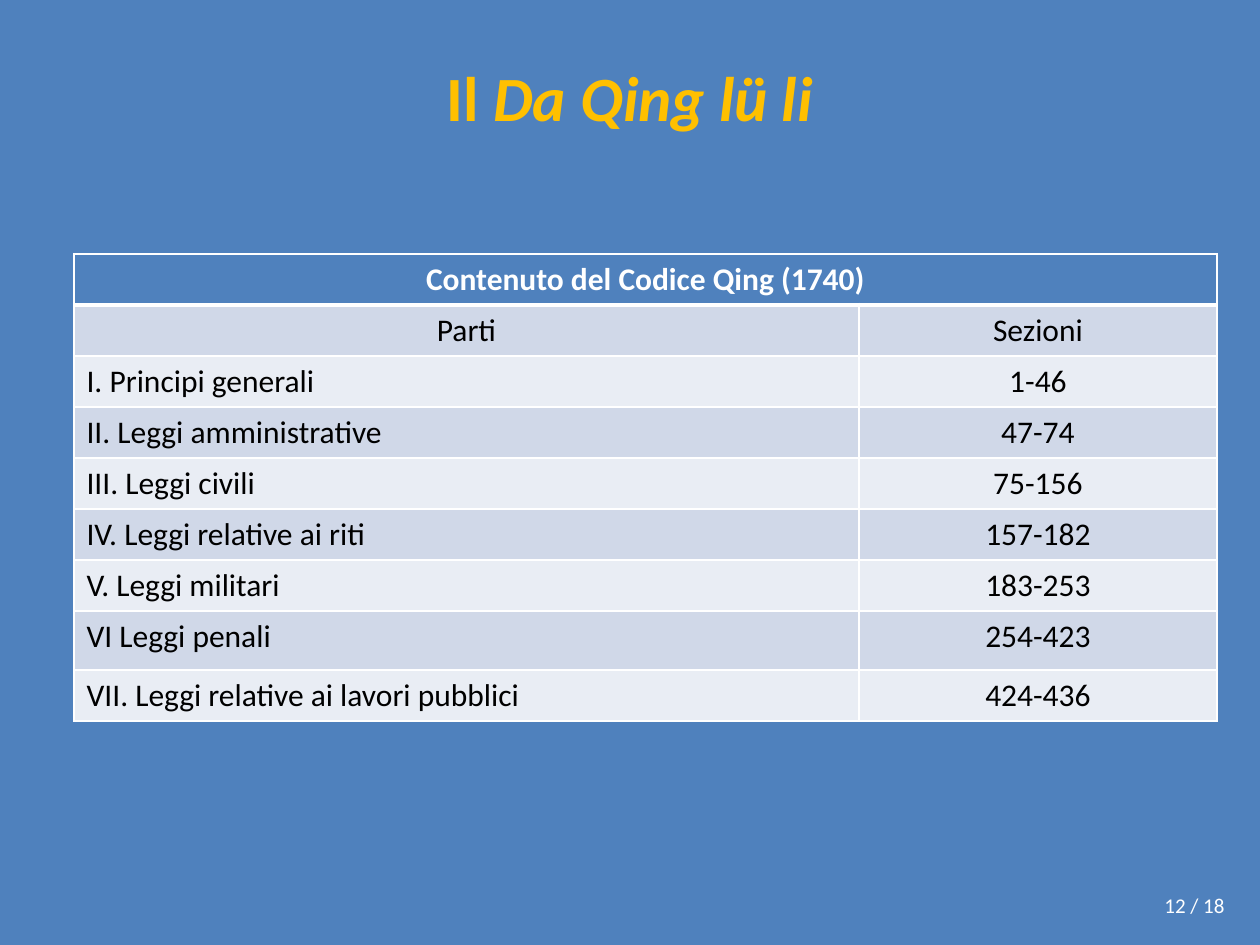
from lxml import etree
from pptx import Presentation, util as u
from pptx.dml.color import RGBColor
from pptx.enum import text
from pptx.oxml import ns

# Content
TITLE = [("Il ", False), ("Da Qing lü li", True)]
HEADER = "Contenuto del Codice Qing (1740)"
ROWS = [
    ("Parti", "Sezioni"),
    ("I. Principi generali", "1-46"),
    ("II. Leggi amministrative", "47-74"),
    ("III. Leggi civili", "75-156"),
    ("IV. Leggi relative ai riti", "157-182"),
    ("V. Leggi militari", "183-253"),
    ("VI Leggi penali", "254-423"),
    ("VII. Leggi relative ai lavori pubblici", "424-436"),
]
PAGE_NUMBER = "12 / 18"

COLOURS = {"blue": "4F81BD", "gold": "FFC000", "white": "FFFFFF",
           "black": "000000", "dark band": "D0D8E8", "light band": "E9EDF4"}
FONT = "Calibri"
COLUMN_WIDTHS = (785, 358)
ROW_HEIGHT, TALL_ROW_HEIGHT, TALL_ROW = 51, 59, 7
LEFT, CENTER, RIGHT = (text.PP_ALIGN.LEFT, text.PP_ALIGN.CENTER,
                       text.PP_ALIGN.RIGHT)


def px(value):
    return u.Emu(round(value * 914400 / 126))


def colour(name):
    return RGBColor.from_string(COLOURS[name])


def style(para, size, colour_name, align, bold=False):
    para.alignment = align
    para.font.name, para.font.size, para.font.bold = FONT, u.Pt(size), bold
    para.font.color.rgb = colour(colour_name)


def add_text(page, place, spans, size, colour_name, align, bold=False):
    frame = page.shapes.add_textbox(*map(px, place)).text_frame
    frame.word_wrap = True
    frame.vertical_anchor = text.MSO_ANCHOR.MIDDLE
    para = frame.paragraphs[0]
    for words, italic in spans:
        span = para.add_run()
        span.text = words
        if italic:
            span.font.italic = True
    style(para, size, colour_name, align, bold)


def set_borders(cell, top=1, bottom=1):
    props = cell._tc.get_or_add_tcPr()
    widths = {"lnL": 1, "lnR": 1, "lnT": top, "lnB": bottom}
    for index, (side, width) in enumerate(widths.items()):
        line = etree.Element(ns.qn("a:" + side), w=str(u.Pt(width)))
        fill = etree.SubElement(line, ns.qn("a:solidFill"))
        etree.SubElement(fill, ns.qn("a:srgbClr"), val=COLOURS["white"])
        props.insert(index, line)


def fill_cell(cell, words, fill, font_colour, align, bold=False):
    cell.text = words
    style(cell.text_frame.paragraphs[0], 18, font_colour, align, bold)
    cell.fill.solid()
    cell.fill.fore_color.rgb = colour(fill)


def add_contents_table(page):
    heights = [ROW_HEIGHT] * (len(ROWS) + 1)
    heights[TALL_ROW] = TALL_ROW_HEIGHT
    table = page.shapes.add_table(
        len(heights), len(COLUMN_WIDTHS), px(74), px(254),
        px(sum(COLUMN_WIDTHS)), px(sum(heights))).table
    for column, width in zip(table.columns, COLUMN_WIDTHS):
        column.width = px(width)
    for row, height in zip(table.rows, heights):
        row.height = px(height)

    # Header across both columns
    table.cell(0, 0).merge(table.cell(0, 1))
    fill_cell(table.cell(0, 0), HEADER, "blue", "white", CENTER, bold=True)
    for cell in table.rows[0].cells:
        set_borders(cell, bottom=3)

    # Banded body
    for r, values in enumerate(ROWS, 1):
        band = "dark band" if r % 2 else "light band"
        for c, words in enumerate(values):
            cell = table.cell(r, c)
            align = LEFT if r > 1 and c == 0 else CENTER
            fill_cell(cell, words, band, "black", align)
            set_borders(cell, top=3 if r == 1 else 1)


def main():
    deck = Presentation()
    deck.slide_width, deck.slide_height = px(1260), px(945)
    page = deck.slides.add_slide(deck.slide_layouts[6])
    page.background.fill.solid()
    page.background.fill.fore_color.rgb = colour("blue")

    add_text(page, (63, 38, 1134, 117), TITLE, 36, "gold", CENTER, bold=True)
    add_contents_table(page)
    add_text(page, (1136, 880, 101, 50), [(PAGE_NUMBER, False)], 12,
             "white", RIGHT)
    deck.save("out.pptx")


if __name__ == "__main__":
    main()
